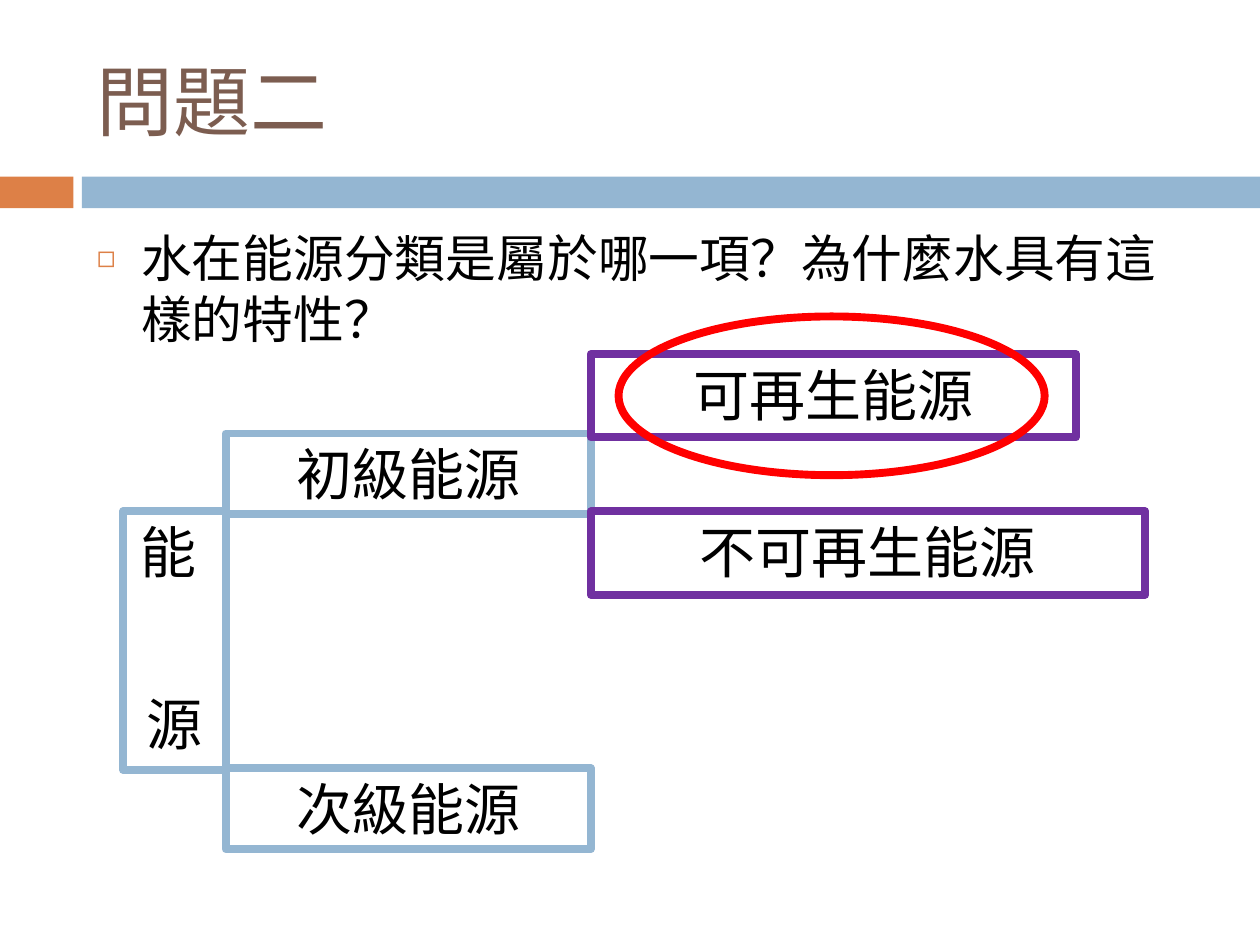
from dataclasses import dataclass

from lxml import etree
from pptx import Presentation
from pptx import util as u
from pptx.dml.color import RGBColor
from pptx.enum import shapes, text
from pptx.oxml import ns


@dataclass(frozen=True)
class Theme:
    orange: str = "DD8047"
    blue: str = "94B6D2"
    brown: str = "7C5D50"
    purple: str = "7030A0"
    red: str = "FF0000"
    black: str = "000000"
    white: str = "FFFFFF"
    heading_font: str = "Arial"
    body_font: str = "Calibri"
    title_size: int = 44
    question_size: int = 29
    label_size: int = 32
    outline: float = 4.5


THEME = Theme()


def place(item, box):
    item.left, item.top, item.width, item.height = (u.Cm(length) for length in box)


def write(paragraph, wording, size, font, color):
    run = paragraph.add_run()
    run.text = wording
    run.font.size = u.Pt(size)
    run.font.name = font
    run.font.color.rgb = RGBColor.from_string(color)


def add_outline(slide, kind, box, fill=None, line=None):
    figure = slide.shapes.add_shape(kind, *(u.Cm(length) for length in box))
    figure.shadow.inherit = False
    if fill:
        figure.fill.solid()
        figure.fill.fore_color.rgb = RGBColor.from_string(fill)
    else:
        figure.fill.background()
    if line:
        figure.line.color.rgb = RGBColor.from_string(line)
        figure.line.width = u.Pt(THEME.outline)
    else:
        figure.line.fill.background()
    return figure


def add_label(slide, box, line, wordings, gap=0):
    """Add a bordered box with one paragraph per wording, gap points apart."""
    label = add_outline(slide, shapes.MSO_SHAPE.RECTANGLE, box, THEME.white, line)
    frame = label.text_frame
    frame.vertical_anchor = text.MSO_ANCHOR.TOP
    for index, wording in enumerate(wordings):
        paragraph = frame.add_paragraph() if index else frame.paragraphs[0]
        paragraph.alignment = text.PP_ALIGN.CENTER
        paragraph.space_before = u.Pt(gap if index else 0)
        write(paragraph, wording, THEME.label_size, THEME.heading_font, THEME.black)


def add_band(slide, box):
    left, top, width, height = box
    accent, gap = 1.48, 0.17
    start = accent + gap
    for x, length, color in ((0, accent, THEME.orange), (start, width - start, THEME.blue)):
        add_outline(slide, shapes.MSO_SHAPE.RECTANGLE, (left + x, top, length, height), color)


def add_title(slide, box):
    title = slide.shapes.title
    place(title, box)
    frame = title.text_frame
    frame.auto_size = text.MSO_AUTO_SIZE.NONE
    frame.vertical_anchor = text.MSO_ANCHOR.MIDDLE
    paragraph = frame.paragraphs[0]
    paragraph.alignment = text.PP_ALIGN.LEFT
    write(paragraph, "問題二", THEME.title_size, THEME.heading_font, THEME.brown)


def set_square_bullet(paragraph):
    properties = paragraph._p.get_or_add_pPr()
    indent = u.Cm(0.89)
    properties.set("marL", str(indent))
    properties.set("indent", str(-indent))
    color = etree.SubElement(properties, ns.qn("a:buClr"))
    etree.SubElement(color, ns.qn("a:srgbClr"), val=THEME.orange)
    etree.SubElement(properties, ns.qn("a:buSzPct"), val="60000")
    etree.SubElement(properties, ns.qn("a:buFont"), typeface=THEME.heading_font)
    etree.SubElement(properties, ns.qn("a:buChar"), char="◻")


def add_question(slide, box):
    question = slide.placeholders[1]
    place(question, box)
    frame = question.text_frame
    frame.auto_size = text.MSO_AUTO_SIZE.NONE
    paragraph = frame.paragraphs[0]
    paragraph.space_before = u.Pt(7)
    set_square_bullet(paragraph)
    write(paragraph, "水在能源分類是屬於哪一項？為什麼水具有這樣的特性？",
          THEME.question_size, THEME.body_font, THEME.black)


def add_energy_tree(slide, box):
    """Add energy, its two classes and their kinds, with the answer circled."""
    left, top, width, height = box
    root_width, class_width = 2.07, 7.36
    class_height, kind_height = 1.63, 1.68
    class_x = left + root_width
    kind_x = class_x + class_width
    root_y = top + 3.17
    primary_y, secondary_y = top + 1.6, top + height - class_height

    add_label(slide, (left, root_y, root_width, 5.21), THEME.blue, ("能 ", "源"), gap=60)
    for y, energy_class in ((primary_y, "初級能源"), (secondary_y, "次級能源")):
        add_label(slide, (class_x, y, class_width, class_height), THEME.blue, (energy_class,))
    kind_width = left + width - kind_x
    for y, length, kind in ((top, kind_width - 1.4, "可再生能源"),
                            (root_y, kind_width, "不可再生能源")):
        add_label(slide, (kind_x, y, length, kind_height), THEME.purple, (kind,))
    add_outline(slide, shapes.MSO_SHAPE.OVAL,
                (kind_x + 0.56, top - 0.76, 8.59, 3.2), line=THEME.red)


def main():
    deck = Presentation()
    deck.slide_width, deck.slide_height = u.Cm(25.4), u.Cm(19.05)
    slide = deck.slides.add_slide(deck.slide_layouts[1])
    add_band(slide, (0, 3.56, 25.4, 0.64))
    add_title(slide, (1.7, 0.64, 22.66, 2.74))
    add_question(slide, (1.7, 4.45, 22.66, 12.5))
    add_energy_tree(slide, (2.48, 7.14, 20.61, 9.98))
    deck.save("out.pptx")


if __name__ == "__main__":
    main()
